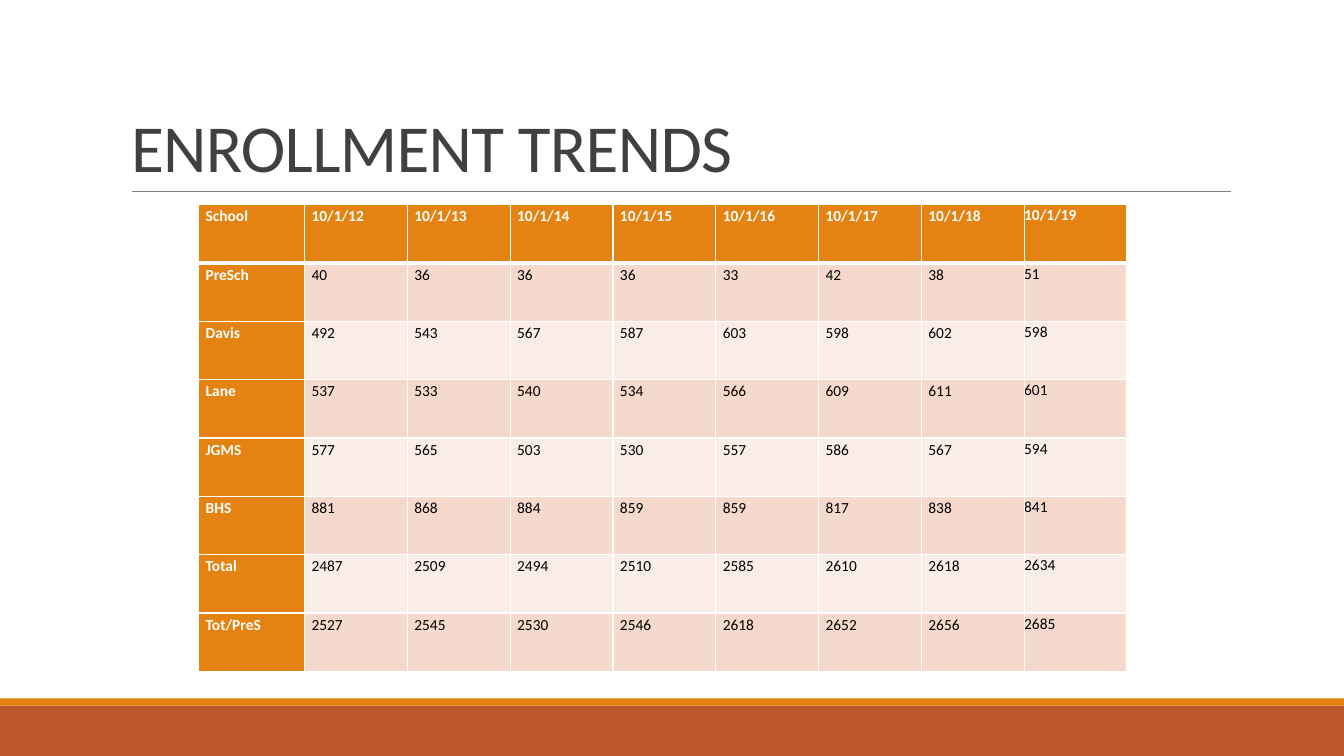
from lxml import etree
from pptx import Presentation
from pptx import util as u
from pptx.dml.color import RGBColor
from pptx.enum import shapes, text
from pptx.oxml import ns

COLORS = {"orange": "E48312", "rust": "BD582C", "rule": "808080", "title": "404040",
          "white": "FFFFFF", "black": "000000", "odd": "F5D9CC", "even": "FAEDE7"}
FONT = "Calibri"
rgb = {name: RGBColor.from_string(value) for name, value in COLORS.items()}


def style(p, para, font, color):
    """Apply paragraph and font settings to a paragraph and its runs."""
    for name, value in para.items():
        setattr(p, name, value)
    for r in p.runs:
        for name, value in font.items():
            setattr(r.font, name, value)
        r.font.color.rgb = rgb[color]


def border(tc_pr, side, width):
    """Add a solid white border to one side of a cell."""
    ln = etree.SubElement(tc_pr, ns.qn(f"a:ln{side}"), w=str(u.Pt(width)))
    fill = etree.SubElement(ln, ns.qn("a:solidFill"))
    etree.SubElement(fill, ns.qn("a:srgbClr"), val=COLORS["white"])


prs = Presentation()
prs.slide_width, prs.slide_height = u.Inches(13.33), u.Inches(7.5)
W, H = prs.slide_width, prs.slide_height
s = prs.slides.add_slide(prs.slide_layouts[5])

# Footer bands
for top, height, color in ((7, 0.5, "rust"), (6.93, 0.07, "orange")):
    sp = s.shapes.add_shape(shapes.MSO_SHAPE.RECTANGLE, 0, u.Inches(top), W, u.Inches(height))
    sp.shadow.inherit = False
    sp.fill.solid()
    sp.fill.fore_color.rgb = rgb[color]
    sp.line.fill.background()

# Rule under the title
rule_y = u.Inches(1.9)
rule = s.shapes.add_connector(shapes.MSO_CONNECTOR.STRAIGHT,
                              u.Inches(1.31), rule_y, u.Inches(12.21), rule_y)
rule.line.color.rgb = rgb["rule"]
rule.line.width = u.Pt(0.5)
etree.SubElement(rule._element.spPr, ns.qn("a:effectLst"))

# Title
title = s.shapes.title
title.left, title.top, title.width, title.height = map(u.Inches, (1.2, 0.31, 11, 1.59))
tf = title.text_frame
tf.text = "ENROLLMENT TRENDS"
tf.word_wrap = True
tf.auto_size = text.MSO_AUTO_SIZE.NONE
tf.vertical_anchor = text.MSO_ANCHOR.BOTTOM
p = tf.paragraphs[0]
style(p, {"alignment": text.PP_ALIGN.LEFT, "line_spacing": 0.85},
      {"name": FONT, "size": u.Pt(48)}, "title")
p.runs[0].font._element.set("spc", "-50")

# Enrollment table
rows = [
    ["School", *(f"10/1/{year}" for year in range(12, 20))],
    ["PreSch", 40, 36, 36, 36, 33, 42, 38, 51],
    ["Davis", 492, 543, 567, 587, 603, 598, 602, 598],
    ["Lane", 537, 533, 540, 534, 566, 609, 611, 601],
    ["JGMS", 577, 565, 503, 530, 557, 586, 567, 594],
    ["BHS", 881, 868, 884, 859, 859, 817, 838, 841],
    ["Total", 2487, 2509, 2494, 2510, 2585, 2610, 2618, 2634],
    ["Tot/PreS", 2527, 2545, 2530, 2546, 2618, 2652, 2656, 2685],
]
n_rows, n_cols = len(rows), len(rows[0])
frame = s.shapes.add_table(n_rows, n_cols, *map(u.Inches, (1.97, 2.03, 9.21, 4.63)))
table = frame.table
first_col = u.Inches(1.05)
for i, col in enumerate(table.columns):
    col.width = first_col if i == 0 else (u.Inches(9.21) - first_col) // (n_cols - 1)

for i, row in enumerate(rows):
    for j, value in enumerate(row):
        cell = table.cell(i, j)
        header = i == 0 or j == 0
        last = j == n_cols - 1

        # The last column has no padding
        cell.margin_left = cell.margin_right = u.Inches(0 if last else 0.07)
        cell.margin_top = u.Inches(0 if last else 0.01)
        cell.margin_bottom = 0

        # A heavier line parts the header row from the body
        for side in "LRTB":
            heavy = (i, side) in ((0, "B"), (1, "T"))
            border(cell._tc.get_or_add_tcPr(), side, 3 if heavy else 1)
        cell.fill.solid()
        cell.fill.fore_color.rgb = rgb["orange" if header else "odd" if i % 2 else "even"]

        cell.text = str(value)
        style(cell.text_frame.paragraphs[0],
              {"line_spacing": 1.07, "space_after": u.Pt(8)},
              {"name": FONT, "size": u.Pt(11), "bold": header},
              "white" if header else "black")

prs.save("out.pptx")
